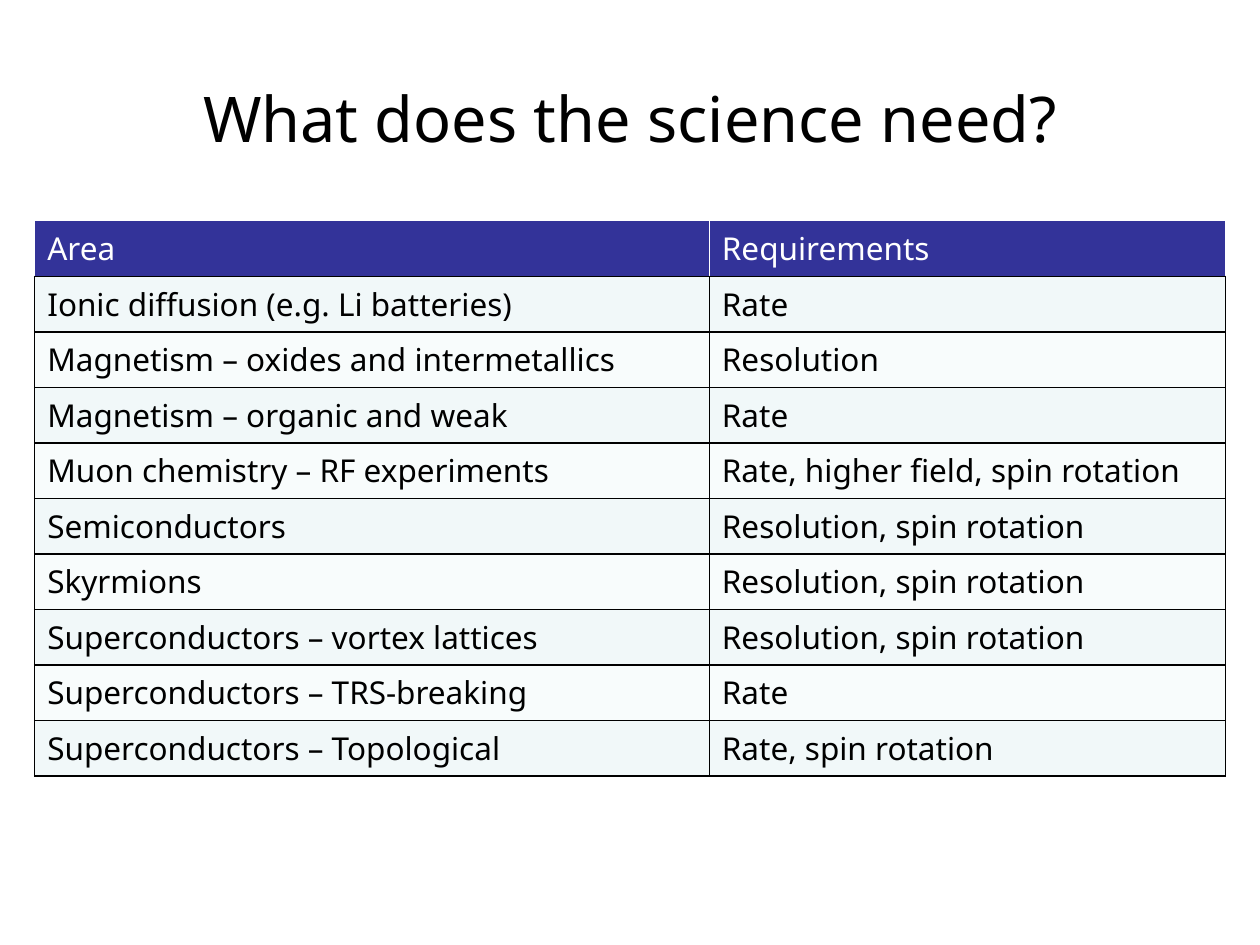
from dataclasses import dataclass

from lxml.etree import SubElement
from pptx import Presentation
from pptx.dml.color import RGBColor as RGB
from pptx.enum.text import MSO_ANCHOR as Anchor, PP_ALIGN as Align
from pptx.oxml.ns import qn
from pptx.util import Cm, Pt


@dataclass(frozen=True)
class Theme:
    font: str = "Noto Sans"
    title_size: int = 36
    table_size: int = 18
    text: str = "000000"
    header_text: str = "FFFFFF"
    header_fill: str = "333399"
    bands: tuple = ("F1F8F9", "F8FCFC")
    border_width: int = 1


class SlideBuilder:
    def __init__(self, prs, theme):
        self.theme = theme
        self.slide = prs.slides.add_slide(prs.slide_layouts[5])

    def style(self, p, size, color):
        p.font.name = self.theme.font
        p.font.size = Pt(size)
        p.font.bold = False
        p.font.color.rgb = RGB.from_string(color)

    def title(self, text, left, top, width, height):
        sp = self.slide.shapes.title
        sp.left, sp.top, sp.width, sp.height = map(Cm, (left, top, width, height))
        tf = sp.text_frame
        tf.text = text
        tf.word_wrap = True
        tf.vertical_anchor = Anchor.MIDDLE
        p = tf.paragraphs[0]
        p.alignment = Align.CENTER
        self.style(p, self.theme.title_size, self.theme.text)

    def border(self, cell, side, color):
        tc_pr = cell._tc.get_or_add_tcPr()
        ln = SubElement(tc_pr, qn(f"a:ln{side}"), w=str(Pt(self.theme.border_width)))
        fill = SubElement(ln, qn("a:solidFill"))
        SubElement(fill, qn("a:srgbClr"), val=color)

    def cell(self, cell, text, row):
        th = self.theme
        header = row == 0
        color = th.header_text if header else th.text
        for side in "LRTB":
            self.border(cell, side, th.text if side == "B" else color)
        cell.fill.solid()
        fill = th.header_fill if header else th.bands[(row - 1) % 2]
        cell.fill.fore_color.rgb = RGB.from_string(fill)
        cell.text = text
        self.style(cell.text_frame.paragraphs[0], th.table_size, color)

    def table(self, rows, left, top, col_widths, row_height):
        frame = self.slide.shapes.add_table(
            len(rows), len(col_widths), Cm(left), Cm(top),
            Cm(sum(col_widths)), Cm(row_height * len(rows)))
        table = frame.table
        for col, width in zip(table.columns, col_widths):
            col.width = Cm(width)
        for i, texts in enumerate(rows):
            for j, text in enumerate(texts):
                self.cell(table.cell(i, j), text, i)


# Header row, then one row per science area
ROWS = [
    ("Area", "Requirements"),
    ("Ionic diffusion (e.g. Li batteries)", "Rate"),
    ("Magnetism – oxides and intermetallics", "Resolution"),
    ("Magnetism – organic and weak", "Rate"),
    ("Muon chemistry – RF experiments", "Rate, higher field, spin rotation"),
    ("Semiconductors", "Resolution, spin rotation"),
    ("Skyrmions", "Resolution, spin rotation"),
    ("Superconductors – vortex lattices", "Resolution, spin rotation"),
    ("Superconductors – TRS-breaking", "Rate"),
    ("Superconductors – Topological", "Rate, spin rotation"),
]


def main():
    prs = Presentation()
    prs.slide_width, prs.slide_height = Cm(25.4), Cm(19.05)
    s = SlideBuilder(prs, Theme())

    # Title
    s.title("What does the science need?", 0.7, 0.36, 24, 4)

    # Requirements table
    s.table(ROWS, 0.7, 4.45, (13.6, 10.4), 1.03)

    prs.save("out.pptx")


if __name__ == "__main__":
    main()
